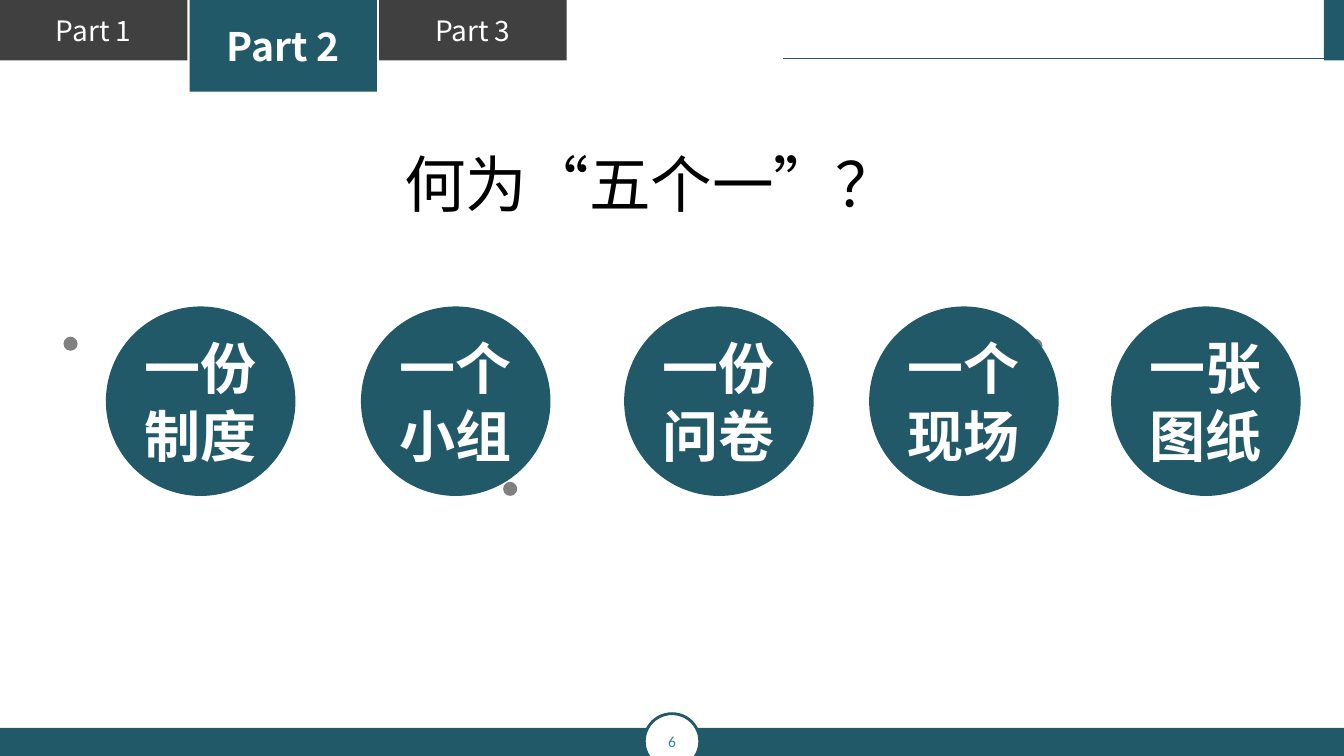
from pptx import Presentation
from pptx import util as u
from pptx.dml.color import RGBColor
from pptx.enum import shapes, text
from pptx.oxml.ns import qn
from lxml import etree

# Content
TITLE = "何为“五个一”？"
TABS = [("Part 1", False), ("Part 2", True), ("Part 3", False)]
CIRCLES = [(1.05, "一份制度"), (3.58, "一个小组"), (6.19, "一份问卷"),
           (8.62, "一个现场"), (11.02, "一张图纸")]
DOTS = [(0.63, 3.34), (4.99, 4.78), (10.2, 3.36)]
PAGE_NUMBER = "6"

# Style and measures, in inches
COLORS = {"teal": "215968", "dark": "404040", "gray": "808080",
          "white": "FFFFFF", "black": "000000", "number": "31859C"}
CJK = "Noto Sans CJK SC"
WIDTH, HEIGHT = 13.33, 7.5
TAB_WIDTH, TAB_STEP, TAB_HEIGHT, ACTIVE_HEIGHT = 1.86, 1.88, 0.6, 0.91
CIRCLE_TOP, CIRCLE_SIZE, DOT_SIZE = 3.04, 1.88, 0.14
FOOTER_HEIGHT, BADGE_SIZE, BADGE_TOP = 0.28, 0.55, 7.08
EDGE_WIDTH, RULE_LEFT, RULE_TOP = 0.2, 7.77, 0.58

RECT = shapes.MSO_SHAPE.RECTANGLE
OVAL = shapes.MSO_SHAPE.OVAL

deck = Presentation()
deck.slide_width, deck.slide_height = u.Inches(WIDTH), u.Inches(HEIGHT)
page = deck.slides.add_slide(deck.slide_layouts[5])


def color(name):
    return RGBColor.from_string(COLORS[name])


def write(shape, words, size, name="white", bold=False, font=CJK,
          align=text.PP_ALIGN.CENTER, inset=0.05):
    frame = shape.text_frame
    frame.word_wrap = True
    frame.vertical_anchor = text.MSO_ANCHOR.MIDDLE
    frame.margin_left = frame.margin_right = u.Inches(inset)
    frame.margin_top = frame.margin_bottom = u.Inches(0)
    para = frame.paragraphs[0]
    para.alignment = align
    span = para.add_run()
    span.text = words
    span.font.name, span.font.size, span.font.bold = font, u.Pt(size), bold
    span.font.color.rgb = color(name)
    east_asian = etree.SubElement(span.font._element, qn("a:ea"))
    east_asian.set("typeface", font)


def add_shape(kind, left, top, width, height, fill, line=None):
    shape = page.shapes.add_shape(kind, *map(u.Inches, (left, top, width, height)))
    shape.shadow.inherit = False
    shape.fill.solid()
    shape.fill.fore_color.rgb = color(fill)
    if line:
        shape.line.color.rgb = color(line)
        shape.line.width = u.Pt(2)
    else:
        shape.line.fill.background()
    return shape


# Navigation tabs
for column, (label, active) in enumerate(TABS):
    tab = add_shape(RECT, column * TAB_STEP, 0, TAB_WIDTH,
                    ACTIVE_HEIGHT if active else TAB_HEIGHT,
                    "teal" if active else "dark")
    write(tab, label, 28 if active else 20, bold=active)

# Header edge and rule
add_shape(RECT, WIDTH - EDGE_WIDTH, 0, EDGE_WIDTH, TAB_HEIGHT, "teal")
rule = page.shapes.add_connector(
    shapes.MSO_CONNECTOR.STRAIGHT, u.Inches(WIDTH - EDGE_WIDTH / 2),
    u.Inches(RULE_TOP), u.Inches(RULE_LEFT), u.Inches(RULE_TOP))
rule.line.color.rgb = color("teal")
rule.line.width = u.Pt(0.75)
etree.SubElement(rule._element.spPr, qn("a:effectLst"))

# Footer with page number
add_shape(RECT, 0, HEIGHT - FOOTER_HEIGHT, WIDTH, FOOTER_HEIGHT, "teal")
badge = add_shape(OVAL, (WIDTH - BADGE_SIZE) / 2, BADGE_TOP,
                  BADGE_SIZE, BADGE_SIZE, "white", "teal")
write(badge, PAGE_NUMBER, 11, "number", font="Calibri")

# Title
title = page.shapes.title
title.left, title.top, title.width, title.height = map(
    u.Inches, (3.91, 1.39, 5.51, 0.84))
title.text_frame.auto_size = text.MSO_AUTO_SIZE.NONE
write(title, TITLE, 44, "black", align=text.PP_ALIGN.LEFT, inset=0.1)

# Dots behind the circles
for left, top in DOTS:
    add_shape(OVAL, left, top, DOT_SIZE, DOT_SIZE, "gray")

# Five circles
for left, label in CIRCLES:
    circle = add_shape(OVAL, left, CIRCLE_TOP, CIRCLE_SIZE, CIRCLE_SIZE, "teal")
    write(circle, label, 40, bold=True)

deck.save("out.pptx")
